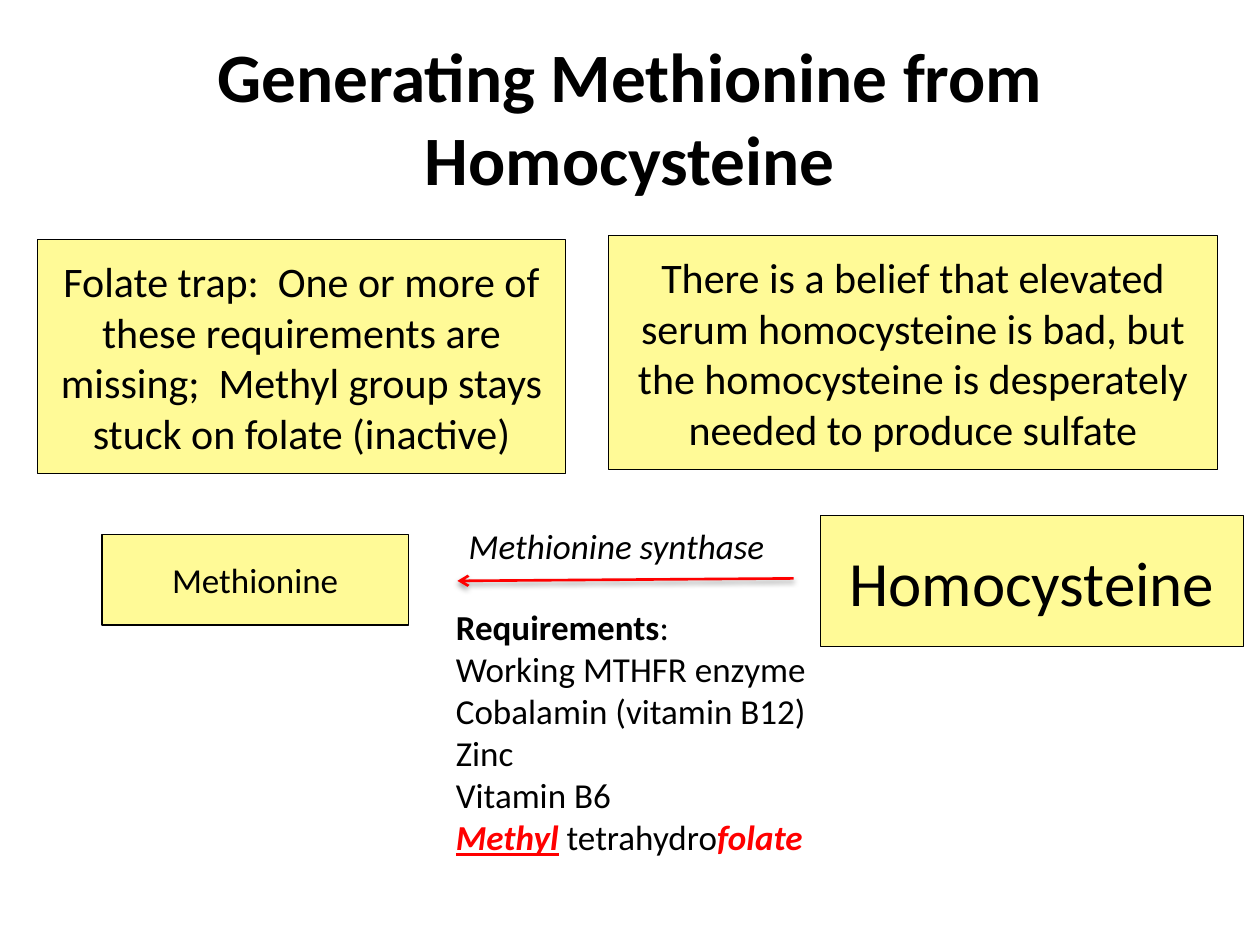
from lxml import etree
from pptx import Presentation
from pptx.dml.color import RGBColor
from pptx.enum import shapes, text
from pptx.oxml import parse_xml
from pptx.oxml.ns import nsdecls, qn
from pptx.util import Cm, Pt

BLACK, RED, YELLOW = "000000", "FF0000", "FFFA97"


def color(hex_code):
    return RGBColor.from_string(hex_code)


def lengths(box):
    return [Cm(value) for value in box]


def add_run(paragraph, words, size, ink=BLACK, bold=False, italic=False, underline=False):
    run = paragraph.add_run()
    run.text = words
    font = run.font
    font.name, font.size = "Calibri", Pt(size)
    font.bold, font.italic, font.underline = bold, italic, underline
    font.color.rgb = color(ink)


def place_title(slide, box, words):
    title = slide.shapes.title
    title.left, title.top, title.width, title.height = lengths(box)
    frame = title.text_frame
    frame.word_wrap = True
    frame.auto_size = text.MSO_AUTO_SIZE.NONE
    frame.vertical_anchor = text.MSO_ANCHOR.MIDDLE
    heading = frame.paragraphs[0]
    heading.alignment = text.PP_ALIGN.CENTER
    add_run(heading, words, 39.6, bold=True)


def add_card(slide, box, words, size):
    """Yellow outlined rectangle with centred text."""
    card = slide.shapes.add_shape(shapes.MSO_SHAPE.RECTANGLE, *lengths(box))
    card.shadow.inherit = False
    card.fill.solid()
    card.fill.fore_color.rgb = color(YELLOW)
    card.line.color.rgb = color(BLACK)
    card.line.width = Pt(0.75)
    frame = card.text_frame
    frame.word_wrap = True
    frame.vertical_anchor = text.MSO_ANCHOR.MIDDLE
    frame.paragraphs[0].alignment = text.PP_ALIGN.CENTER
    add_run(frame.paragraphs[0], words, size)


def add_lines(slide, box, lines, wrap):
    """Text box with one paragraph per line; a line is a list of (words, format) runs."""
    frame = slide.shapes.add_textbox(*lengths(box)).text_frame
    frame.word_wrap = wrap
    frame.auto_size = text.MSO_AUTO_SIZE.SHAPE_TO_FIT_TEXT
    for index, runs in enumerate(lines):
        paragraph = frame.add_paragraph() if index else frame.paragraphs[0]
        for words, style in runs:
            add_run(paragraph, words, 20, **style)


def add_reaction_arrow(slide, start, end):
    arrow = slide.shapes.add_connector(
        shapes.MSO_CONNECTOR.STRAIGHT, *lengths(start + end))
    arrow.line.color.rgb = color(RED)
    arrow.line.width = Pt(1.5)
    etree.SubElement(arrow.line._get_or_add_ln(), qn("a:tailEnd"), type="arrow")
    arrow._element.spPr.append(parse_xml(
        f'<a:effectLst {nsdecls("a")}>'
        f'<a:outerShdw blurRad="{Pt(3.1)}" dist="{Pt(1.6)}" dir="5400000" rotWithShape="0">'
        f'<a:srgbClr val="{BLACK}"><a:alpha val="38000"/></a:srgbClr>'
        '</a:outerShdw></a:effectLst>'))


def add_reaction(slide, box):
    """Homocysteine to methionine, with the enzyme above the arrow and its needs below."""
    left, top, width, height = box
    middle = left + 7.14
    add_reaction_arrow(slide, (left + 13.94, top + 1.27), (left + 7.16, top + 1.32))

    emphasis = dict(ink=RED, bold=True, italic=True)
    needs = ["Working MTHFR enzyme", "Cobalamin (vitamin B12)", "Zinc", "Vitamin B6"]
    requirements = [
        [("Requirements", dict(bold=True)), (":", {})],
        *[[(need, {})] for need in needs],
        [("Methyl", dict(emphasis, underline=True)), (" ", dict(ink=RED)),
         ("tetrahydro", {}), ("folate", emphasis)],
    ]
    add_lines(slide, (middle - 0.26, top + 1.7, 7.92, height - 1.7), requirements, wrap=False)
    add_card(slide, (left + width - 8.53, top, 8.53, 2.64), "Homocysteine", 36)
    add_card(slide, (left, top + 0.38, 6.17, 1.83), "Methionine", 20)
    add_lines(slide, (middle, top + 0.05, 7.67, 1.12),
              [[("Methionine synthase", dict(italic=True))]], wrap=True)


def main():
    deck = Presentation()
    deck.slide_width, deck.slide_height = Cm(25.4), Cm(19.05)
    slide = deck.slides.add_slide(deck.slide_layouts[5])
    place_title(slide, (1.27, 0.76, 22.86, 3.18), "Generating Methionine from Homocysteine")
    add_card(slide, (0.76, 4.83, 10.64, 4.72),
             "Folate trap:  One or more of these requirements are missing;  "
             "Methyl group stays stuck on folate (inactive)", 24)
    add_card(slide, (12.27, 4.75, 12.27, 4.72),
             "There is a belief that elevated serum homocysteine is bad, but "
             "the homocysteine is desperately needed to produce sulfate", 24)
    add_reaction(slide, (2.06, 10.39, 23.01, 7.09))
    deck.save("out.pptx")


if __name__ == "__main__":
    main()
